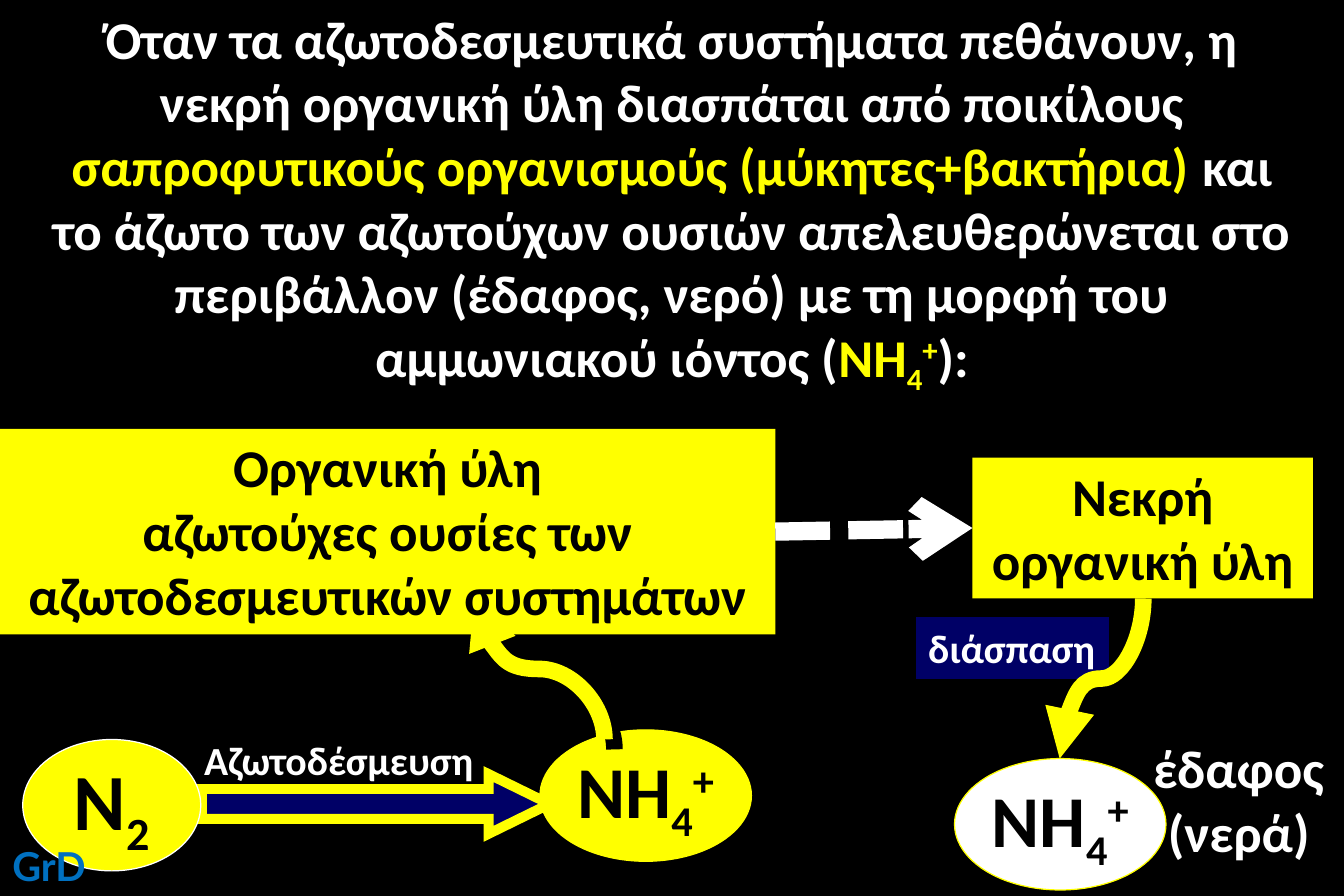
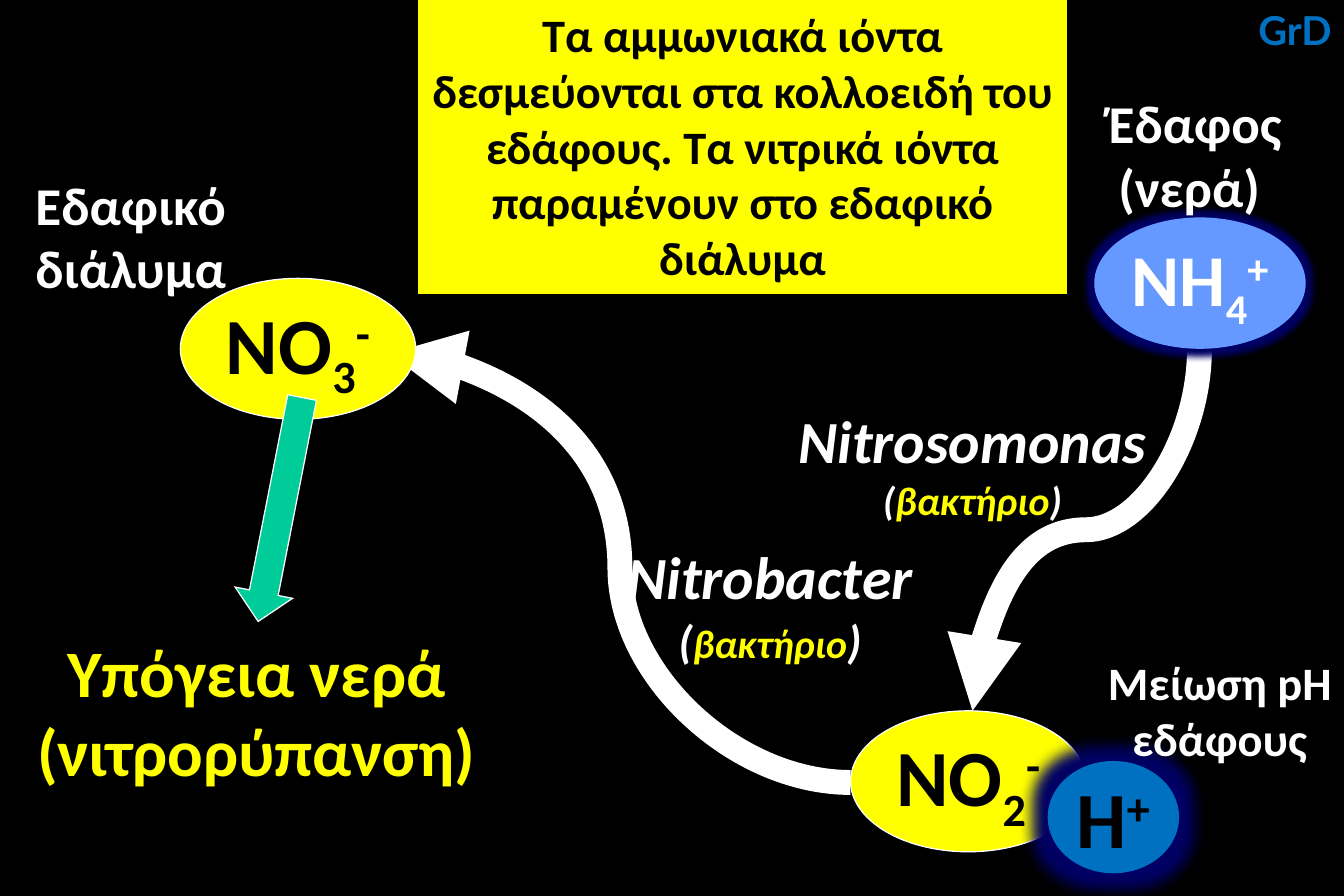
from lxml import etree
from pptx import Presentation
from pptx.dml.color import RGBColor
from pptx.enum.dml import MSO_LINE
from pptx.enum.shapes import MSO_CONNECTOR, MSO_SHAPE
from pptx.enum.text import MSO_ANCHOR, MSO_AUTO_SIZE, PP_ALIGN
from pptx.oxml.ns import qn
from pptx.util import Inches, Pt

RECTANGLE, OVAL = MSO_SHAPE.RECTANGLE, MSO_SHAPE.OVAL
RIGHT_ARROW, DOWN_ARROW = MSO_SHAPE.RIGHT_ARROW, MSO_SHAPE.DOWN_ARROW
CURVE, STRAIGHT = MSO_CONNECTOR.CURVE, MSO_CONNECTOR.STRAIGHT
TOP, MIDDLE = MSO_ANCHOR.TOP, MSO_ANCHOR.MIDDLE
CENTER, LEFT = PP_ALIGN.CENTER, PP_ALIGN.LEFT
NO_FIT = MSO_AUTO_SIZE.NONE
SHORT_DASH = MSO_LINE.SQUARE_DOT
TITLE_ONLY = 5

COLORS = {
    "black": "000000", "white": "FFFFFF", "yellow": "FFFF00",
    "navy": "000066", "blue": "0070C0", "sky": "6699FF", "green": "00CC99",
}
BODY_FONT, MARK_FONT = "Calibri", "Lato"
SUBSCRIPT, SUPERSCRIPT = -25000, 30000


def color(name):
    """Return the named colour."""
    return RGBColor.from_string(COLORS[name])


def add_xml(parent, tag, **attributes):
    """Append a drawing element and return it."""
    values = {key: str(value) for key, value in attributes.items()}
    return etree.SubElement(parent, qn("a:" + tag), values)


def ion(symbol, below="", above=""):
    """Return one paragraph of spans for a chemical symbol."""
    spans = [(symbol, {}), (below, {"base": SUBSCRIPT}), (above, {"base": SUPERSCRIPT})]
    return [[span for span in spans if span[0]]]


def plain(*lines):
    """Return one single-span paragraph for each line."""
    return [[(line, {})] for line in lines]


def write(shape, paragraphs, size, ink="white", align=CENTER, anchor=TOP,
          wrap=True, italic=False, font=BODY_FONT):
    """Fill a shape with paragraphs of bold spans."""
    frame = shape.text_frame
    frame.auto_size = NO_FIT
    frame.word_wrap = wrap
    frame.vertical_anchor = anchor
    for index, spans in enumerate(paragraphs):
        para = frame.add_paragraph() if index else frame.paragraphs[0]
        para.alignment = align
        for text, style in spans:
            span = para.add_run()
            span.text = text
            span.font.name = font
            span.font.bold = True
            span.font.italic = italic
            span.font.size = Pt(style.get("size", size))
            span.font.color.rgb = color(style.get("ink", ink))
            if "base" in style:
                span.font._element.set("baseline", str(style["base"]))


def add_label(page, box, paragraphs, size, **style):
    """Add a text box."""
    label = page.shapes.add_textbox(*map(Inches, box))
    write(label, paragraphs, size, **style)


def add_block(page, kind, box, fill, line=None, width=0.75, glow=0):
    """Add a preset shape with flat fill, outline and optional glow in points."""
    block = page.shapes.add_shape(kind, *map(Inches, box))
    block.shadow.inherit = False
    block.fill.solid()
    block.fill.fore_color.rgb = color(fill)
    if line:
        block.line.color.rgb = color(line)
        block.line.width = Pt(width)
        add_xml(block.line._get_or_add_ln(), "miter", lim=800000)
    else:
        block.line.fill.background()
    if glow:
        effects = block._element.spPr.find(qn("a:effectLst"))
        halo = add_xml(effects, "glow", rad=Pt(glow))
        add_xml(halo, "srgbClr", val=COLORS["navy"])
    return block


def add_panel(page, box, paragraphs, size, fill="yellow", ink="black", line=None, **style):
    """Add a filled rectangle with text."""
    panel = add_block(page, RECTANGLE, box, fill, line)
    write(panel, paragraphs, size, ink, **style)


def add_oval(page, box, paragraphs, size=48, fill="yellow", line=None, ink="black", glow=0):
    """Add an oval holding a chemical symbol."""
    oval = add_block(page, OVAL, box, fill, line, glow=glow)
    write(oval, paragraphs, size, ink, anchor=MIDDLE, wrap=False)


def add_arrow(page, start, end, ink, width, kind=CURVE, head="triangle",
              upright=False, shadow=False, dash=None):
    """Add an arrow; an upright curve leaves and arrives vertically."""
    (x1, y1), (x2, y2) = start, end
    turn = 0
    if upright:
        middle_x, middle_y = (x1 + x2) / 2, (y1 + y2) / 2
        sign = 1 if y2 > y1 else -1
        turn = 90 if sign > 0 else 270
        across, along = sign * (y1 - middle_y), sign * (middle_x - x1)
        x1, y1 = middle_x + across, middle_y + along
        x2, y2 = middle_x - across, middle_y - along
    arrow = page.shapes.add_connector(kind, *map(Inches, (x1, y1, x2, y2)))
    arrow.line.color.rgb = color(ink)
    arrow.line.width = Pt(width)
    if dash:
        arrow.line.dash_style = dash
    add_xml(arrow.line._get_or_add_ln(), "tailEnd", type=head)
    properties = arrow._element.spPr
    if turn:
        properties.find(qn("a:xfrm")).set("rot", str(turn * 60000))
    effects = add_xml(properties, "effectLst")
    if shadow:
        cast = add_xml(effects, "outerShdw", dist=Pt(8.5), dir=45 * 60000,
                       algn="ctr", rotWithShape=0)
        add_xml(cast, "srgbClr", val=COLORS["black"])


def add_page(deck, box, paragraphs, size, ink="white", fill=None):
    """Add a slide with its title placed in the given box."""
    page = deck.slides.add_slide(deck.slide_layouts[TITLE_ONLY])
    title = page.shapes.title
    title.left, title.top, title.width, title.height = map(Inches, box)
    if fill:
        title.fill.solid()
        title.fill.fore_color.rgb = color(fill)
    write(title, paragraphs, size, ink)
    return page


def add_mark(page, left, top):
    """Add the author's initials."""
    add_label(page, (left, top, 0.82, 0.5), plain("GrD"), 24, ink="blue", font=MARK_FONT)


def add_fixation(page, left, top):
    """Draw nitrogen fixation into organic matter."""
    arrow = add_block(page, RIGHT_ARROW, (left + 1.69, top + 2.89, 2.91, 0.5),
                      "navy", "yellow", 6)
    arrow.adjustments[1] = 1.02
    add_label(page, (left + 1.61, top + 2.52, 2.48, 0.51), plain("Αζωτοδέσμευση"), 24,
              align=LEFT, wrap=False)
    add_oval(page, (left + 0.19, top + 2.6, 1.49, 1.1), ion("Ν", "2"), line="white")
    add_oval(page, (left + 4.52, top + 2.52, 1.77, 1.1), ion("ΝΗ", "4", "+"), 44, line="yellow")
    add_arrow(page, (left + 5.06, top + 2.6), (left + 3.97, top + 1.42), "yellow", 10,
              upright=True, shadow=True)
    add_panel(page, (left, top, 6.49, 1.72),
              plain("Οργανική ύλη", "αζωτούχες ουσίες των αζωτοδεσμευτικών συστημάτων"), 32)


def add_decomposition(page, left, top):
    """Draw the breakdown of dead matter into ammonium."""
    add_panel(page, (left + 0.47, top, 2.85, 1.18), plain("Νεκρή οργανική ύλη"), 32)
    add_panel(page, (left, top + 1.34, 1.61, 0.51), plain("διάσπαση"), 24,
              fill="navy", ink="white", line="navy", align=LEFT, wrap=False)
    add_arrow(page, (left + 1.9, top + 1.18), (left + 1.2, top + 2.52), "yellow", 10,
              upright=True, shadow=True)
    add_label(page, (left + 1.82, top + 2.28, 1.76, 1.18), plain("έδαφος (νερά)"), 32)
    add_oval(page, (left + 0.32, top + 2.52, 1.77, 1.1), ion("ΝΗ", "4", "+"), 44,
             fill="white", line="yellow")


def add_bacterium(page, box, name, bracket_size):
    """Name a bacterium above its bracketed kind."""
    bracket = {"size": bracket_size}
    kind = [("(", bracket), ("βακτήριο", {"size": 24, "ink": "yellow"}), (")", bracket)]
    add_label(page, box, plain(name) + [kind], 36, wrap=False, italic=True)


def add_nitrification(page, left, top):
    """Draw the bacterial path from ammonium through nitrite."""
    add_arrow(page, (left + 6.78, top + 2.21), (left + 4.88, top + 5.24), "white", 15,
              upright=True)
    add_arrow(page, (left + 3.86, top + 5.84), (left, top + 2.25), "white", 15)
    add_bacterium(page, (left + 1.88, top + 3.76, 2.61, 1.18), "Nitrobacter", 28)
    add_bacterium(page, (left + 3.31, top + 2.62, 3.14, 1.11), "Nitrosomonas", 24)
    add_oval(page, (left + 5.9, top + 1.11, 1.77, 1.1), ion("ΝΗ", "4", "+"), 44,
             fill="sky", ink="white", glow=8)
    add_oval(page, (left + 3.86, top + 5.24, 1.97, 1.18), ion("ΝΟ", "2", "-"), line="white")
    add_oval(page, (left + 5.51, top + 5.66, 1.1, 0.94), ion("Η", above="+"),
             fill="blue", glow=18)
    add_label(page, (left + 5.76, top, 1.97, 1.18), plain("Έδαφος", "(νερά) "), 32)
    add_label(page, (left + 5.87, top + 4.72, 2.16, 1.04), plain("Μείωση pH εδάφους"), 28)


def add_leaching(page, left, top):
    """Draw nitrate passing from soil solution to groundwater."""
    add_oval(page, (left + 1.43, top + 0.94, 1.97, 1.18), ion("ΝΟ", "3", "-"), line="white")
    add_label(page, (left, top, 2.03, 1.18), plain("Εδαφικό διάλυμα"), 32)
    arrow = add_block(page, DOWN_ARROW, (left + 2.02, top + 1.92, 0.49, 1.91),
                      "green", "white")
    arrow.rotation = 11.1
    add_label(page, (left + 0.11, top + 3.84, 3.91, 1.45),
              plain("Υπόγεια νερά", "(νιτρορύπανση)"), 40, ink="yellow", wrap=False)


def build_ammonification(deck):
    """Build the slide on the release of ammonium."""
    bright = {"ink": "yellow"}
    statement = [
        ("Όταν τα αζωτοδεσμευτικά συστήματα πεθάνουν, η νεκρή οργανική ύλη "
         "διασπάται από ποικίλους ", {}),
        ("σαπροφυτικούς οργανισμούς (μύκητες+βακτήρια) ", bright),
        ("και το άζωτο των αζωτούχων ουσιών απελευθερώνεται στο περιβάλλον "
         "(έδαφος, νερό) με τη μορφή του αμμωνιακού ιόντος (", {}),
    ]
    statement += [(text, {**style, **bright}) for text, style in ion("ΝΗ", "4", "+")[0]]
    statement.append(("):", {}))
    page = add_page(deck, (0.27, 0, 10.71, 3.33), [statement], 32)
    add_fixation(page, 0, 3.59)
    add_decomposition(page, 7.67, 3.83)
    add_arrow(page, (6.49, 4.45), (8.14, 4.42), "white", 11, kind=STRAIGHT,
              head="arrow", dash=SHORT_DASH)
    add_mark(page, 0, 7)


def build_nitrification(deck):
    """Build the slide on the fate of ammonium and nitrate."""
    statement = plain("Τα αμμωνιακά ιόντα δεσμεύονται στα κολλοειδή του εδάφους. "
                      "Τα νιτρικά ιόντα παραμένουν στο εδαφικό διάλυμα")
    page = add_page(deck, (3.5, 0, 5.43, 2.46), statement, 28, "black", "yellow")
    add_nitrification(page, 3.26, 0.71)
    add_leaching(page, 0.08, 1.39)
    add_mark(page, 10.43, 0)


def main():
    """Build and save the deck."""
    deck = Presentation()
    deck.slide_width, deck.slide_height = Inches(11.25), Inches(7.5)
    backdrop = deck.slide_master.background.fill
    backdrop.solid()
    backdrop.fore_color.rgb = color("black")
    build_ammonification(deck)
    build_nitrification(deck)
    deck.save("out.pptx")


if __name__ == "__main__":
    main()
